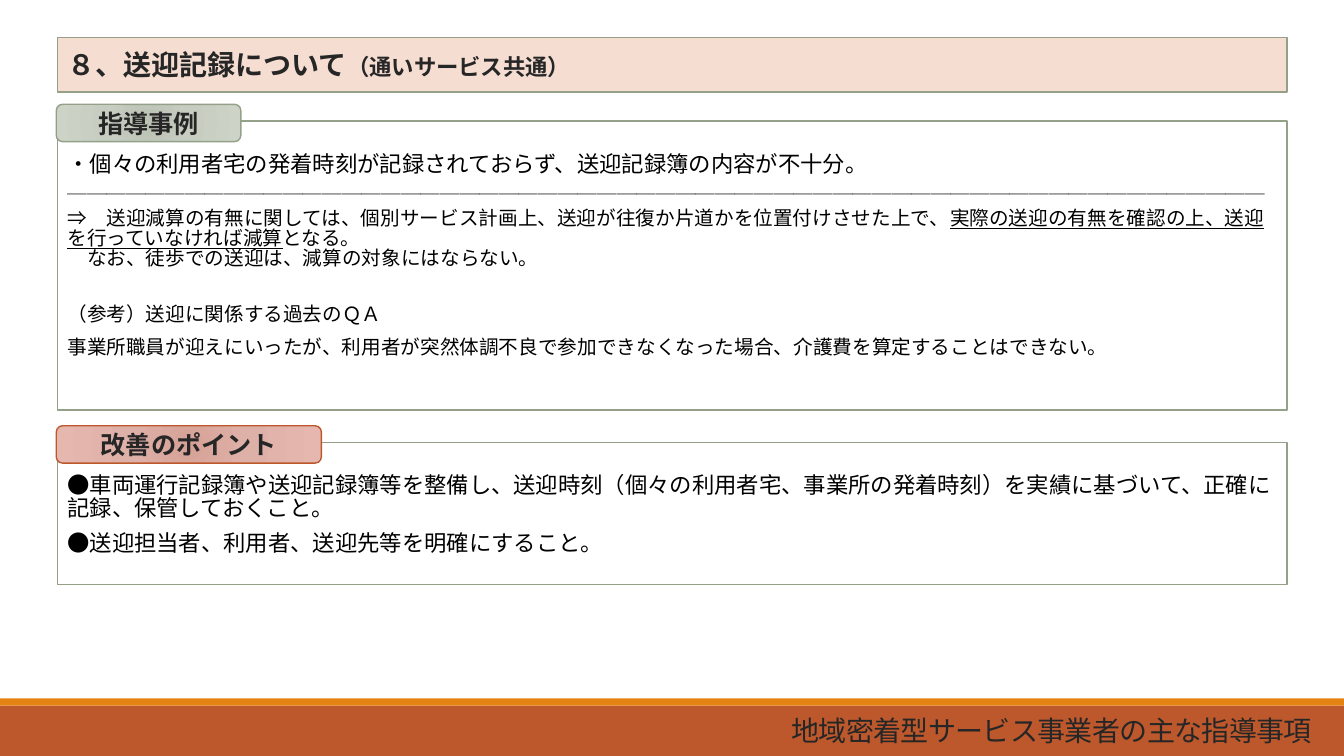
from lxml import etree
from pptx import Presentation
from pptx.dml.color import RGBColor
from pptx.enum.shapes import MSO_SHAPE as SHAPE
from pptx.enum.text import MSO_ANCHOR as ANCHOR, PP_ALIGN as ALIGN
from pptx.oxml import parse_xml
from pptx.oxml.ns import nsdecls, qn
from pptx.util import Cm, Pt

FONT = "Noto Sans CJK JP"
BLACK = RGBColor(0x00, 0x00, 0x00)
DARK = RGBColor(0x26, 0x26, 0x26)
WHITE = RGBColor(0xFF, 0xFF, 0xFF)
RUST = RGBColor(0xBD, 0x58, 0x2C)
ORANGE = RGBColor(0xE4, 0x83, 0x12)
PEACH = RGBColor(0xF5, 0xDD, 0xD2)
SAGE = RGBColor(0x94, 0xA0, 0x88)
SAGE_STOPS = [RGBColor(0xBB, 0xC3, 0xB5), RGBColor(0xC7, 0xCD, 0xC1), RGBColor(0xCD, 0xD4, 0xC7)]
RUST_STOPS = [RGBColor(0xD7, 0xA1, 0x97), RGBColor(0xDE, 0xB1, 0xA8), RGBColor(0xE6, 0xB7, 0xAE)]
STOP_POSITIONS = [0, 45, 100]

SLIDE_W, SLIDE_H = Cm(33.87), Cm(19.05)
LEFT, WIDTH = Cm(1.45), Cm(30.99)
TAB_H, TAB_RISE = Cm(0.94), Cm(0.42)

HEADING = {"size": Pt(20), "bold": True}
SUBHEADING = {"size": Pt(16), "bold": True}
TAB = {"size": Pt(18), "bold": True}
FOOTER = {"size": Pt(20)}
LARGE = {"size": Pt(16)}
SMALL = {"size": Pt(14)}
UNDERLINED = {"size": Pt(14), "underline": True}

TIGHT = {"line_spacing": 0.85}
GAP = {**TIGHT, "space_before": Pt(9)}
WIDE_GAP = {**TIGHT, "space_before": Pt(26)}

CASE = [
    (TIGHT, [("・個々の利用者宅の発着時刻が記録されておらず、送迎記録簿の内容が不十分。", LARGE, BLACK)]),
    (TIGHT, [("＿" * 61, SMALL, DARK)]),
    (GAP, [
        ("⇒　送迎減算の有無に関しては、個別サービス計画上、送迎が往復か片道かを位置付けさせた上で、", SMALL, BLACK),
        ("実際の送迎の有無を確認の上、送迎を行っていなければ減算", UNDERLINED, BLACK),
        ("となる。", SMALL, BLACK),
    ]),
    (TIGHT, [("　なお、徒歩での送迎は、減算の対象にはならない。", SMALL, BLACK)]),
    (WIDE_GAP, [("（参考）送迎に関係する過去のＱＡ", SMALL, BLACK)]),
    (GAP, [("事業所職員が迎えにいったが、利用者が突然体調不良で参加できなくなった場合、"
            "介護費を算定することはできない。", SMALL, BLACK)]),
]
POINTS = [
    (TIGHT, [("●車両運行記録簿や送迎記録簿等を整備し、送迎時刻（個々の利用者宅、事業所の発着時刻）を"
              "実績に基づいて、正確に記録、保管しておくこと。", LARGE, BLACK)]),
    (GAP, [("●送迎担当者、利用者、送迎先等を明確にすること。", LARGE, BLACK)]),
]


def set_attrs(obj, values):
    for name, value in values.items():
        setattr(obj, name, value)


def add_text(sp, paragraphs, **frame):
    """Fill a shape with (paragraph format, [(text, font format, colour)]) items."""
    tf = sp.text_frame
    set_attrs(tf, {"word_wrap": True, **frame})
    for i, (layout, runs) in enumerate(paragraphs):
        p = tf.add_paragraph() if i else tf.paragraphs[0]
        set_attrs(p, {"alignment": ALIGN.LEFT, **layout})
        for text, style, color in runs:
            r = p.add_run()
            r.text = text
            set_attrs(r.font, {"name": FONT, **style})
            r.font.color.rgb = color
            etree.SubElement(r.font._element, qn("a:ea"), typeface=FONT)


def add_box(s, kind, left, top, width, height, fill=None, line=None, weight=1):
    sp = s.shapes.add_shape(kind, left, top, width, height)
    sp.shadow.inherit = False
    if fill is not None:
        sp.fill.solid()
        sp.fill.fore_color.rgb = fill
    if line is None:
        sp.line.fill.background()
    else:
        sp.line.color.rgb = line
        sp.line.width = Pt(weight)
    return sp


def set_radial_fill(sp, colors):
    stops = "".join(
        f'<a:gs pos="{pos * 1000}"><a:srgbClr val="{color}"/></a:gs>'
        for pos, color in zip(STOP_POSITIONS, colors))
    sp._element.spPr.find(qn("a:prstGeom")).addnext(parse_xml(
        f'<a:gradFill {nsdecls("a")} rotWithShape="1"><a:gsLst>{stops}</a:gsLst>'
        '<a:path path="circle"><a:fillToRect l="100000" t="100000" r="100000" b="100000"/>'
        '</a:path></a:gradFill>'))


def add_section(s, top, height, paragraphs, title, tab_width, stops, tab_line):
    """Add a framed panel with a titled tab over its top left corner."""
    panel = add_box(s, SHAPE.RECTANGLE, LEFT, top, WIDTH, height, WHITE, SAGE, 1.25)
    add_text(panel, paragraphs, vertical_anchor=ANCHOR.TOP, margin_top=Cm(0.83))
    tab = add_box(s, SHAPE.ROUNDED_RECTANGLE, Cm(1.42), top - TAB_RISE, tab_width, TAB_H, line=tab_line)
    set_radial_fill(tab, stops)
    add_text(tab, [({"alignment": ALIGN.CENTER}, [(title, TAB, DARK)])],
             vertical_anchor=ANCHOR.MIDDLE)


def add_heading(s):
    sp = add_box(s, SHAPE.RECTANGLE, LEFT, Cm(0.94), WIDTH, Cm(1.38), PEACH, SAGE)
    add_text(sp, [({}, [("８、送迎記録について", HEADING, DARK),
                        ("（通いサービス共通）", SUBHEADING, DARK)])],
             vertical_anchor=ANCHOR.MIDDLE)


def add_footer(s):
    add_box(s, SHAPE.RECTANGLE, 0, Cm(17.78), SLIDE_W, Cm(1.27), RUST)
    add_box(s, SHAPE.RECTANGLE, 0, Cm(17.6), SLIDE_W, Cm(0.18), ORANGE)
    sp = s.shapes.add_textbox(LEFT, Cm(17.88), Cm(31.85), Cm(1.17))
    add_text(sp, [({**TIGHT, "alignment": ALIGN.RIGHT},
                   [("地域密着型サービス事業者の主な指導事項", FOOTER, DARK)])],
             vertical_anchor=ANCHOR.MIDDLE)
    sp.text_frame.paragraphs[0].runs[0].font._element.set("spc", "-50")


def main():
    prs = Presentation()
    set_attrs(prs, {"slide_width": SLIDE_W, "slide_height": SLIDE_H})
    s = prs.slides.add_slide(prs.slide_layouts[6])
    add_footer(s)
    add_heading(s)
    add_section(s, Cm(3.05), Cm(7.29), CASE, "指導事例", Cm(4.65), SAGE_STOPS, SAGE)
    add_section(s, Cm(11.15), Cm(3.58), POINTS, "改善のポイント", Cm(6.68), RUST_STOPS, RUST)
    prs.save("out.pptx")


if __name__ == "__main__":
    main()
